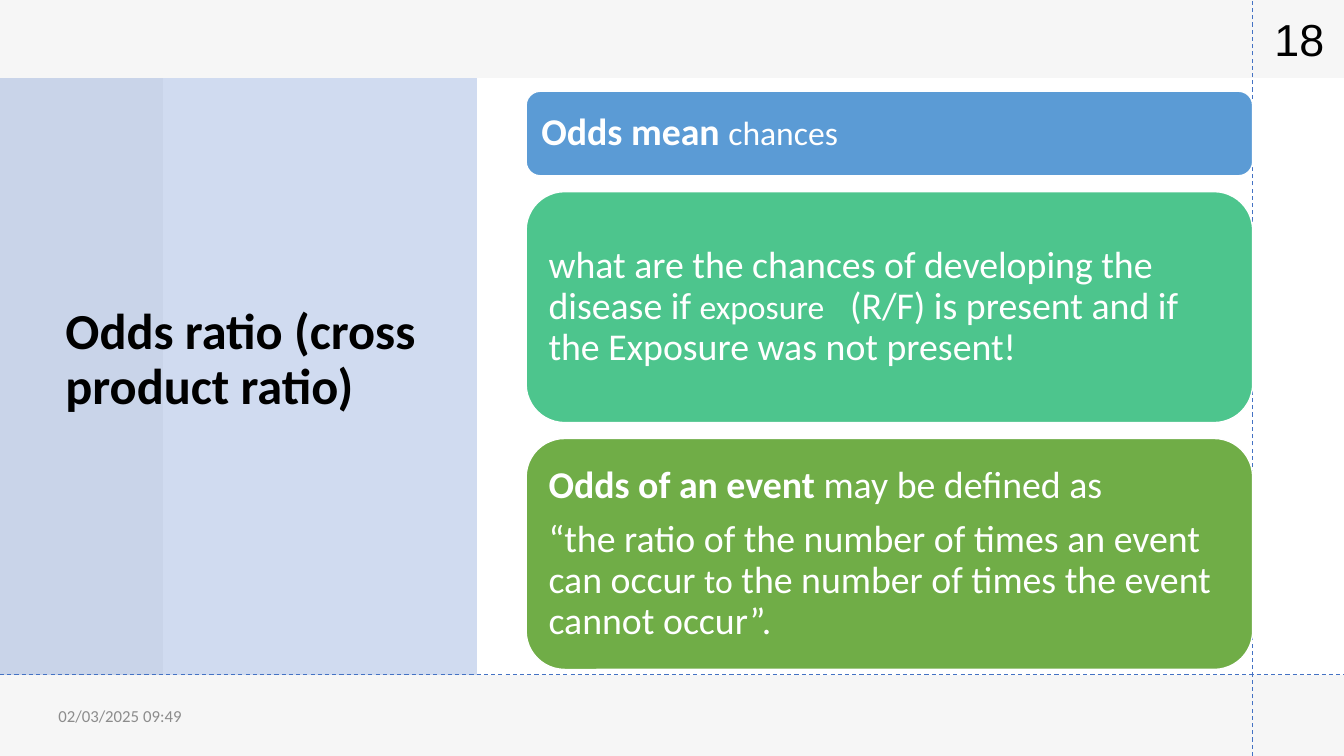
import dataclasses

import lxml.etree
import pptx
import pptx.dml.color
import pptx.enum.dml
import pptx.enum.shapes
import pptx.enum.text
import pptx.oxml.ns
import pptx.util

Cm = pptx.util.Cm
Pt = pptx.util.Pt
SHAPE = pptx.enum.shapes.MSO_SHAPE
ALIGN = pptx.enum.text.PP_ALIGN
qn = pptx.oxml.ns.qn


@dataclasses.dataclass(frozen=True)
class Theme:
    """Colours, fonts and type sizes of the slide."""
    page: str = "F6F6F6"
    white: str = "FFFFFF"
    black: str = "000000"
    muted: str = "8C8C8C"
    accent: str = "4472C4"
    blue: str = "5B9BD5"
    teal: str = "4DC58D"
    green: str = "70AD47"
    font: str = "Calibri"
    digit: str = "Arial"
    title: int = 36
    number: int = 32
    body: int = 27
    small: int = 24
    date: int = 12


THEME = Theme()
WIDE, HIGH = 33.87, 19.05
CARDS = [
    (THEME.blue, 2.13, [
        [("Odds mean ", THEME.body, True), ("chances", THEME.small, False)]]),
    (THEME.teal, 5.82, [
        [("what are the chances of developing the disease if ", THEME.body, False),
         ("exposure", THEME.small, False),
         ("\t(R/F) is present and if the Exposure was not present!", THEME.body, False)]]),
    (THEME.green, 5.82, [
        [("Odds of an event", THEME.body, True), (" may be defined as", THEME.body, False)],
        [("“the ratio of the number of times an event can occur ", THEME.body, False),
         ("to", THEME.small, False),
         (" the number of times the event cannot occur”.", THEME.body, False)]]),
]


def tint(color):
    """Turn a hex string into a colour."""
    return pptx.dml.color.RGBColor.from_string(color)


def block(slide, kind, box, fill):
    """Draw a filled shape without outline or shadow."""
    shape = slide.shapes.add_shape(kind, *map(Cm, box))
    shape.shadow.inherit = False
    shape.fill.solid()
    shape.fill.fore_color.rgb = tint(fill)
    shape.line.fill.background()
    return shape


def style(run, size, color, bold=False, font=THEME.font):
    """Format one run."""
    run.font.name = font
    run.font.size = Pt(size)
    run.font.bold = bold
    run.font.color.rgb = tint(color)


def label(slide, box, text, size, color, bold=False, font=THEME.font, align=ALIGN.LEFT):
    """Place one line of text, centred vertically in its box."""
    frame = slide.shapes.add_textbox(*map(Cm, box)).text_frame
    frame.word_wrap = True
    frame.vertical_anchor = pptx.enum.text.MSO_ANCHOR.MIDDLE
    frame.text = text
    para = frame.paragraphs[0]
    para.alignment = align
    style(para.runs[0], size, color, bold, font)
    return para


def guide(slide, start, end):
    """Draw a dashed guide line."""
    line = slide.shapes.add_connector(
        pptx.enum.shapes.MSO_CONNECTOR.STRAIGHT, *map(Cm, start + end))
    line.line.color.rgb = tint(THEME.accent)
    line.line.width = Pt(0.75)
    line.line.dash_style = pptx.enum.dml.MSO_LINE.DASH
    lxml.etree.SubElement(line.element.spPr, qn("a:effectLst"))


def panel(slide, box):
    """Draw the translucent title panel over the white area."""
    left, top, width, height = box
    block(slide, SHAPE.RECTANGLE, (4.11, top, WIDE - 4.11, height), THEME.white)
    shade = block(slide, SHAPE.RECTANGLE, box, THEME.accent)
    color = shade.element.spPr.find(qn("a:solidFill"))[0]
    lxml.etree.SubElement(color, qn("a:alpha"), val="25000")
    title = label(slide, (left + 1.4, top - 0.1, width - 1.98, height - 0.6),
                  "Odds ratio (cross product ratio)", THEME.title, THEME.black, True)
    title.line_spacing = 0.9


def card(slide, box, fill, paras):
    """Draw one rounded card with its mixed runs."""
    shape = block(slide, SHAPE.ROUNDED_RECTANGLE, box, fill)
    shape.line.color.rgb = tint(THEME.white)
    shape.line.width = Pt(1)
    frame = shape.text_frame
    frame.word_wrap = True
    frame.vertical_anchor = pptx.enum.text.MSO_ANCHOR.MIDDLE
    frame.margin_left = frame.margin_right = Cm(0.28)
    frame.margin_top = frame.margin_bottom = Cm(0.28)
    for index, parts in enumerate(paras):
        para = frame.add_paragraph() if index else frame.paragraphs[0]
        para.alignment = ALIGN.LEFT
        para.line_spacing = 0.9
        para.space_after = Pt(9.45)
        if any("\t" in text for text, size, bold in parts):
            tabs = lxml.etree.SubElement(para._p.get_or_add_pPr(), qn("a:tabLst"))
            lxml.etree.SubElement(tabs, qn("a:tab"), pos=str(Cm(7.6)), algn="l")
        for text, size, bold in parts:
            run = para.add_run()
            run.text = text
            style(run, size, THEME.white, bold)


def stack(slide, box, gap):
    """Pile the cards from the top of the box."""
    left, top, width = box
    for fill, height, paras in CARDS:
        card(slide, (left, top, width, height), fill, paras)
        top += height + gap


def frame(slide, box):
    """Draw the guides, slide number and date at the edges."""
    left, top, width, height = box
    side, base = left + width - 2.3, top + 17
    guide(slide, (side, top + height), (side, top))
    guide(slide, (left, base), (left + width, base))
    label(slide, (side + 0.05, top, 2.25, 1.96), "18", THEME.number,
          THEME.black, font=THEME.digit, align=ALIGN.CENTER)
    label(slide, (left + 1.22, base + 0.05, 7.62, 2), "02/03/2025 09:49",
          THEME.date, THEME.muted)


def main():
    """Build and save the slide."""
    deck = pptx.Presentation()
    deck.slide_width, deck.slide_height = Cm(WIDE), Cm(HIGH)
    slide = deck.slides.add_slide(deck.slide_layouts[6])
    slide.background.fill.solid()
    slide.background.fill.fore_color.rgb = tint(THEME.page)
    panel(slide, (0, 1.97, 12.02, 15.04))
    frame(slide, (0, 0, WIDE, HIGH))
    stack(slide, (13.26, 2.3, 18.31), 0.4)
    deck.save("out.pptx")


if __name__ == "__main__":
    main()
